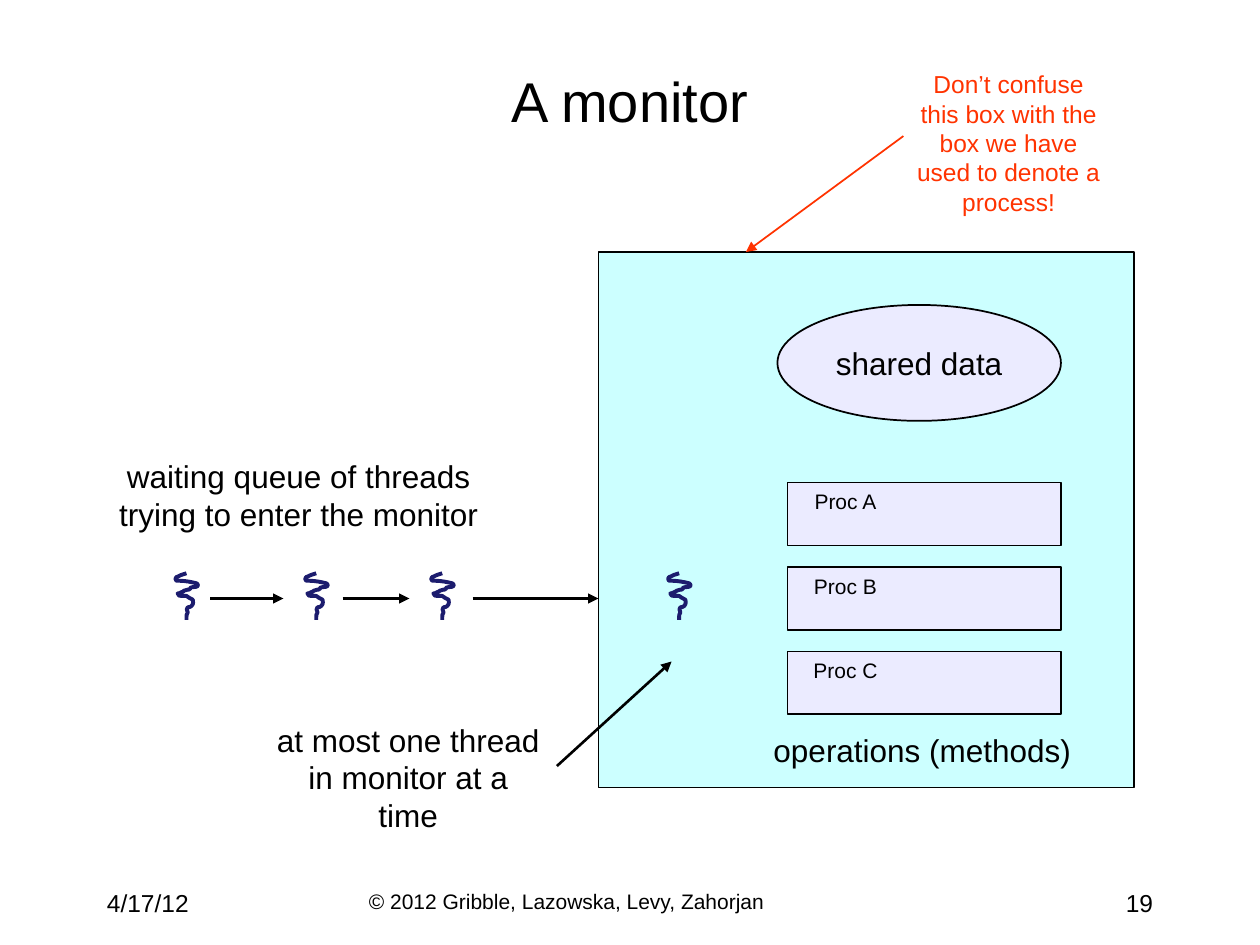
from lxml import etree
from pptx import Presentation
from pptx.dml.color import RGBColor
from pptx.enum.shapes import MSO_CONNECTOR, MSO_SHAPE
from pptx.enum.text import MSO_ANCHOR, PP_ALIGN
from pptx.oxml.ns import qn
from pptx.util import Inches, Pt

LEFT, MID, RIGHT = PP_ALIGN.LEFT, PP_ALIGN.CENTER, PP_ALIGN.RIGHT
TOP, MIDDLE = MSO_ANCHOR.TOP, MSO_ANCHOR.MIDDLE
RECT, OVAL = MSO_SHAPE.RECTANGLE, MSO_SHAPE.OVAL
STRAIGHT = MSO_CONNECTOR.STRAIGHT

THEME = {
    "font": "Arial", "ink": "000000", "warn": "FF3300", "thread": "1C1C6E",
    "monitor": "CCFFFF", "part": "EBEBFF",
    "title": 32, "body": 18, "note": 14, "small": 12,
}

TITLE = ("A monitor", (0.75, 0.42, 8.5, 0.75))
# text, box, size, colour, alignment, wrap
FOOTER = [
    ("© 2012 Gribble, Lazowska, Levy, Zahorjan", (2.83, 7, 4.33, 0.42), "small", "ink", LEFT, True),
    ("4/17/12", (0.75, 7, 2.08, 0.33), "note", "ink", LEFT, True),
    ("19", (7.17, 7, 2.08, 0.33), "note", "ink", RIGHT, True),
]
LABELS = [
    ("waiting queue of threads trying to enter the monitor",
     (0.58, 3.58, 3.58, 0.7), "body", "ink", MID, True),
    ("operations (methods)", (6.04, 5.75, 2.56, 0.4), "body", "ink", MID, False),
    ("at most one thread in monitor at a time",
     (2.08, 5.67, 2.32, 1), "body", "ink", MID, True),
    ("Don’t confuse this box with the box we have used to denote a process!",
     (7.17, 0.5, 1.67, 1.26), "note", "warn", MID, True),
]
MONITOR = (4.75, 2, 4.25, 4.25)
SHARED = ("shared data", (6.17, 2.42, 2.25, 0.92))
PROCS = ["Proc A", "Proc B", "Proc C"]
PROC_TOP, PROC_STEP = 3.83, 0.67
# start, end, colour, width
ARROWS = [
    ((1.67, 4.75), (2.25, 4.75), "ink", 1.5),
    ((2.72, 4.75), (3.25, 4.75), "ink", 1.5),
    ((3.75, 4.75), (4.75, 4.75), "ink", 1.5),
    ((4.42, 6.08), (5.33, 5.25), "ink", 1.5),
    ((7.17, 1.08), (5.92, 2), "warn", 1),
]
THREADS, THREAD_TOP = [1.39, 2.42, 3.42, 5.3], 4.55
# Bezier curves of a thread, in hundredths of an inch from its top left:
# a start, then two handles and an end for each curve
START = (9, 0)
CURVES = [
    (8, 0), (7, 0), (6, 1), (5, 1), (2, 3), (1, 3),
    (0, 4), (0, 5), (1, 6), (1, 6), (2, 6), (3, 6),
    (3, 6), (4, 6), (4, 6), (8, 6), (13, 7), (17, 8),
    (17, 9), (17, 9), (18, 9), (19, 11), (15, 11), (14, 11),
    (10, 12), (14, 11), (11, 13), (11, 13), (10, 13), (10, 13),
    (3, 15), (10, 13), (5, 15), (4, 15), (4, 15), (3, 16),
    (3, 16), (2, 16), (2, 16), (2, 18), (4, 18), (5, 18),
    (6, 18), (7, 18), (8, 18), (8, 18), (8, 18), (9, 18),
    (10, 19), (12, 20), (14, 21), (14, 22), (15, 24), (13, 26),
    (13, 27), (10, 27), (10, 27), (9, 29), (9, 28), (10, 31),
    (9, 32), (9, 34), (9, 35), (9, 36), (9, 36), (9, 37),
]


def color(name):
    return RGBColor.from_string(THEME[name])


def place(shape, box):
    for name, val in zip(("left", "top", "width", "height"), box):
        setattr(shape, name, Inches(val))


def write(shape, text, size, tint="ink", align=MID, wrap=True, anchor=TOP):
    frame = shape.text_frame
    for name, val in {"word_wrap": wrap, "vertical_anchor": anchor}.items():
        setattr(frame, name, val)
    para = frame.paragraphs[0]
    para.alignment = align
    run = para.add_run()
    run.text = text
    for name, val in {"name": THEME["font"], "size": Pt(THEME[size])}.items():
        setattr(run.font, name, val)
    run.font.color.rgb = color(tint)


def label(slide, text, box, *look):
    write(slide.shapes.add_textbox(*map(Inches, box)), text, *look)


def stroke(shape, tint, width):
    shape.line.color.rgb = color(tint)
    shape.line.width = Pt(width)


def block(slide, kind, box, fill):
    shape = slide.shapes.add_shape(kind, *map(Inches, box))
    shape.shadow.inherit = False
    shape.fill.solid()
    shape.fill.fore_color.rgb = color(fill)
    stroke(shape, "ink", 1)
    return shape


def arrow(slide, start, end, tint, width):
    line = slide.shapes.add_connector(STRAIGHT, *map(Inches, start + end))
    stroke(line, tint, width)
    etree.SubElement(line.line._get_or_add_ln(), qn("a:tailEnd"), type="triangle")
    etree.SubElement(line._element.spPr, qn("a:effectLst"))


def bend(shape):
    """Turn each three line segments into one Bezier curve."""
    trace = next(shape._element.iter(qn("a:path")))
    lines = trace.findall(qn("a:lnTo"))
    for i in range(0, len(lines), 3):
        curve = etree.SubElement(trace, qn("a:cubicBezTo"))
        for line in lines[i:i + 3]:
            curve.append(line[0])
            trace.remove(line)


def thread(slide, left):
    dots = [(Inches(left + x / 100), Inches(THREAD_TOP + y / 100))
            for x, y in [START, *CURVES]]
    form = slide.shapes.build_freeform(*dots[0])
    form.add_line_segments(dots[1:], close=False)
    shape = form.convert_to_shape()
    bend(shape)
    shape.shadow.inherit = False
    shape.fill.background()
    stroke(shape, "thread", 2.25)


def main():
    deck = Presentation()
    deck.slide_width, deck.slide_height = Inches(10), Inches(7.5)
    slide = deck.slides.add_slide(deck.slide_layouts[5])
    text, box = TITLE
    title = slide.shapes.title
    place(title, box)
    write(title, text, "title", anchor=MIDDLE)

    block(slide, RECT, MONITOR, "monitor")
    text, box = SHARED
    write(block(slide, OVAL, box, "part"), text, "body", wrap=False, anchor=MIDDLE)
    for i, name in enumerate(PROCS):
        top = PROC_TOP + i * PROC_STEP
        block(slide, RECT, (6.25, top, 2.17, 0.5), "part")
        label(slide, name, (6, top, 1.42, 0.3), "small")
    for item in FOOTER + LABELS:
        label(slide, *item)
    for item in ARROWS:
        arrow(slide, *item)
    for left in THREADS:
        thread(slide, left)
    deck.save("out.pptx")


if __name__ == "__main__":
    main()
